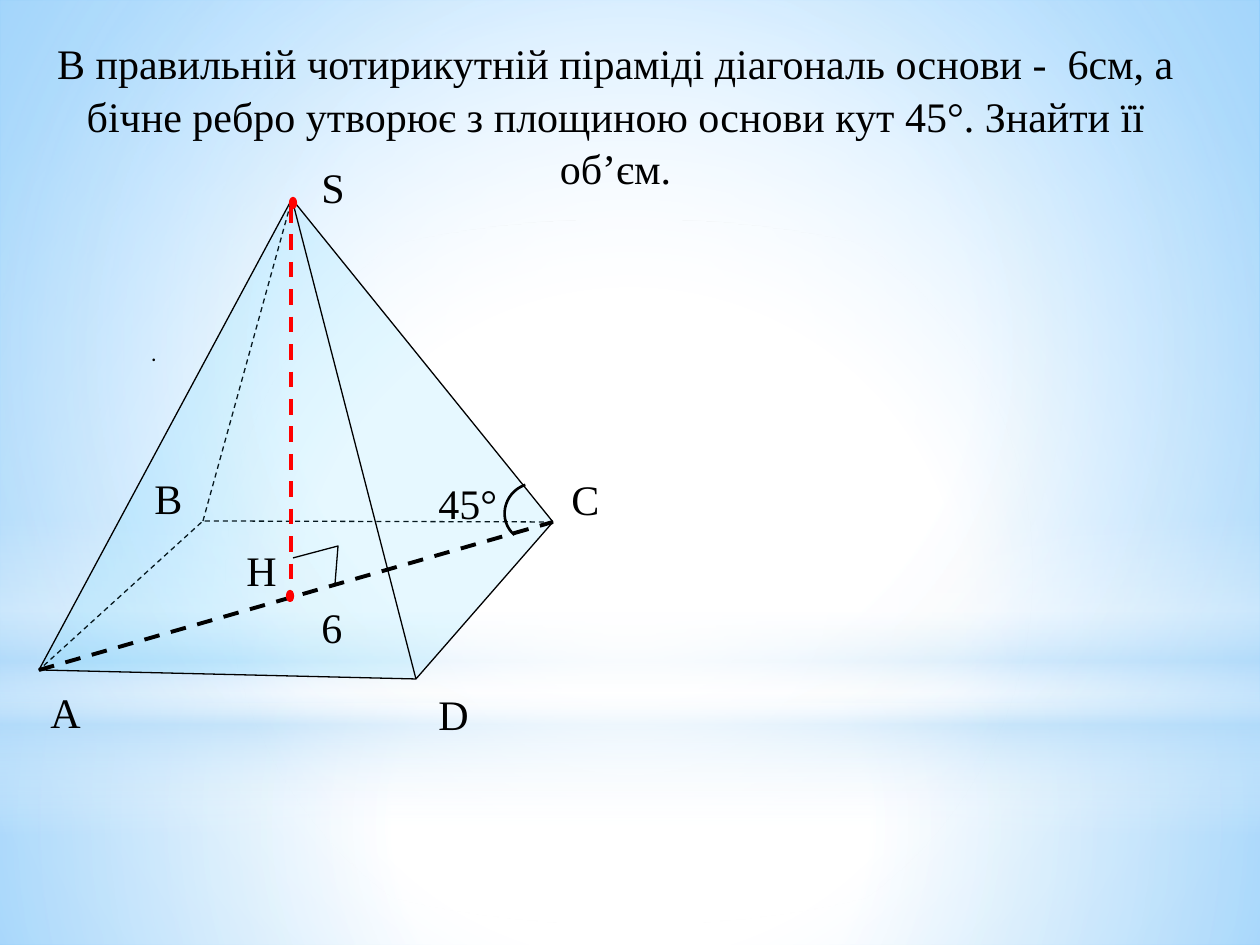
from lxml.etree import SubElement
from pptx import Presentation
from pptx.dml.color import RGBColor
from pptx.enum.dml import MSO_LINE
from pptx.enum.shapes import MSO_CONNECTOR, MSO_SHAPE
from pptx.enum.text import MSO_ANCHOR, MSO_AUTO_SIZE, PP_ALIGN
from pptx.oxml.ns import qn
from pptx.util import Pt

PX = 914400 / 126
WIDTH, HEIGHT = 1260, 945
COLORS = {"ink": "000000", "height": "FF0000", "face": "33CCFF",
          "white": "FFFFFF", "sky": "63BCFF", "haze": "B4DCFA"}
FONT = "Times New Roman"

PROBLEM = ("В правильній чотирикутній піраміді діагональ основи -  6см, "
           "а бічне ребро утворює з площиною основи кут 45°. Знайти її об’єм.")
PROBLEM_BOX = (44, 32, 1143, 165)

# Text, left, top, width
LABELS = [
    ("6", 309, 595, 47), ("45°", 426, 471, 84), ("Н", 234, 538, 57),
    ("А", 38, 680, 57), ("В", 142, 466, 54), ("С", 559, 467, 54),
    ("D", 426, 682, 57), ("S", 309, 155, 49),
]
LABEL_HEIGHT = 63
STRAY_DOT_BOX = (139, 334, 32, 38)

A, B, C, D, S = (39, 670), (203, 521), (553, 522), (416, 679), (292, 199)
HEIGHT_TOP, HEIGHT_FOOT = (291, 207), (291, 601)
RIGHT_ANGLE = [(293, 558), (338, 546), (335, 584)]
ANGLE_ARC = (505, 483, 57, 59)
HEIGHT_DOTS = [(290, 198, 6, 10), (287, 591, 6, 10)]

# Gradient stops: position %, colour, opacity %
SKY_STOPS = [(0, "white", 100), (42, "white", 100), (100, "sky", 100)]
SKY_FOCUS = (24, 44, 24, 12)
CENTRE = (50, 50, 50, 50)
# Shape, box, stops, focus of a round gradient (None: top to bottom)
BACKDROP = [
    (MSO_SHAPE.RECTANGLE, (0, 703, WIDTH, 242),
     [(0, "white", 91), (37, "white", 76), (100, "haze", 79)], CENTRE),
    (MSO_SHAPE.RECTANGLE, (0, 0, WIDTH, 703),
     [(0, "white", 89), (48, "white", 62), (100, "haze", 79)], CENTRE),
    (MSO_SHAPE.RECTANGLE, (0, 519, WIDTH, 315),
     [(0, "white", 0), (29, "white", 30), (45, "haze", 40),
      (55, "white", 26), (65, "haze", 60), (100, "white", 0)], None),
    (MSO_SHAPE.OVAL, (0, 220, WIDTH, 703),
     [(0, "white", 100), (56, "white", 0)], CENTRE),
]


def emu(*lengths):
    return [round(length * PX) for length in lengths]


def rgb(name):
    return RGBColor.from_string(COLORS[name])


def set_gradient(fill, stops, focus):
    """Give a fill its own stops, around a focus rectangle or top to bottom."""
    fill.gradient()
    grad = fill._xPr.find(qn("a:gradFill"))
    for child in list(grad):
        grad.remove(child)
    stop_list = SubElement(grad, qn("a:gsLst"))
    for position, name, opacity in stops:
        stop = SubElement(stop_list, qn("a:gs"), pos=str(position * 1000))
        color = SubElement(stop, qn("a:srgbClr"), val=COLORS[name])
        if opacity < 100:
            SubElement(color, qn("a:alpha"), val=str(opacity * 1000))
    if focus is None:
        SubElement(grad, qn("a:lin"), ang="5400000", scaled="0")
    else:
        path = SubElement(grad, qn("a:path"), path="circle")
        sides = {side: str(share * 1000) for side, share in zip("ltrb", focus)}
        SubElement(path, qn("a:fillToRect"), **sides)


def set_line(shape, width, color="ink", dashed=False):
    shape.line.color.rgb = rgb(color)
    shape.line.width = Pt(width)
    if dashed:
        shape.line.dash_style = MSO_LINE.DASH


def add_preset(shapes, kind, box):
    shape = shapes.add_shape(kind, *emu(*box))
    shape.shadow.inherit = False
    return shape


def add_outline(shapes, points, dashed=False):
    builder = shapes.build_freeform(*points[0], scale=PX)
    builder.add_line_segments(points[1:], close=False)
    outline = builder.convert_to_shape()
    outline.shadow.inherit = False
    outline.fill.background()
    set_line(outline, 0.75, dashed=dashed)
    return outline


def add_dashed_line(shapes, start, end, color):
    line = shapes.add_connector(MSO_CONNECTOR.STRAIGHT, *emu(*start, *end))
    set_line(line, 2.25, color, dashed=True)
    SubElement(line._element.spPr, qn("a:effectLst"))


def style_text(paragraph, size, font=FONT):
    paragraph.font.size = Pt(size)
    paragraph.font.name = font
    paragraph.font.color.rgb = rgb("ink")


def add_label(shapes, text, box, size=24, font=FONT):
    frame = shapes.add_textbox(*emu(*box)).text_frame
    frame.word_wrap = False
    frame.text = text
    style_text(frame.paragraphs[0], size, font)
    return frame


def add_problem(slide):
    title = slide.shapes.title
    title.left, title.top, title.width, title.height = emu(*PROBLEM_BOX)
    frame = title.text_frame
    frame.text = PROBLEM
    frame.word_wrap = True
    frame.auto_size = MSO_AUTO_SIZE.NONE
    frame.vertical_anchor = MSO_ANCHOR.MIDDLE
    paragraph = frame.paragraphs[0]
    paragraph.alignment = PP_ALIGN.CENTER
    paragraph.line_spacing = 1.04
    style_text(paragraph, 24)
    # Bring the title in front of the backdrop
    slide.shapes._spTree.append(title._element)


def add_pyramid(shapes):
    add_outline(shapes, [C, B, A], dashed=True)
    add_outline(shapes, [B, S], dashed=True)
    faces = add_outline(shapes, [S, A, D, S, C, D])
    faces.fill.solid()
    faces.fill.fore_color.rgb = rgb("face")
    color = faces.fill._xPr.find(qn("a:solidFill"))[0]
    SubElement(color, qn("a:alpha"), val="12000")


def add_measurements(shapes):
    add_dashed_line(shapes, A, C, "ink")
    arc = add_preset(shapes, MSO_SHAPE.ARC, ANGLE_ARC)
    arc.adjustments[0], arc.adjustments[1] = 162, 19.96
    arc.rotation = 220.3
    arc.fill.background()
    set_line(arc, 1.5)
    add_outline(shapes, RIGHT_ANGLE)
    add_dashed_line(shapes, HEIGHT_TOP, HEIGHT_FOOT, "height")
    for box in HEIGHT_DOTS:
        dot = add_preset(shapes, MSO_SHAPE.OVAL, box)
        dot.fill.solid()
        dot.fill.fore_color.rgb = rgb("height")
        set_line(dot, 1.25, "height")


def main():
    deck = Presentation()
    deck.slide_width, deck.slide_height = emu(WIDTH, HEIGHT)
    slide = deck.slides.add_slide(deck.slide_layouts[5])
    shapes = slide.shapes

    set_gradient(slide.background.fill, SKY_STOPS, SKY_FOCUS)
    for kind, box, stops, focus in BACKDROP:
        glow = add_preset(shapes, kind, box)
        set_gradient(glow.fill, stops, focus)
        glow.line.fill.background()

    add_problem(slide)
    add_pyramid(shapes)
    add_measurements(shapes)
    for text, left, top, width in LABELS:
        add_label(shapes, text, (left, top, width, LABEL_HEIGHT))
    stray_dot = add_label(shapes, ".", STRAY_DOT_BOX, 12, "Lato")
    stray_dot.vertical_anchor = MSO_ANCHOR.MIDDLE

    deck.save("out.pptx")


if __name__ == "__main__":
    main()
